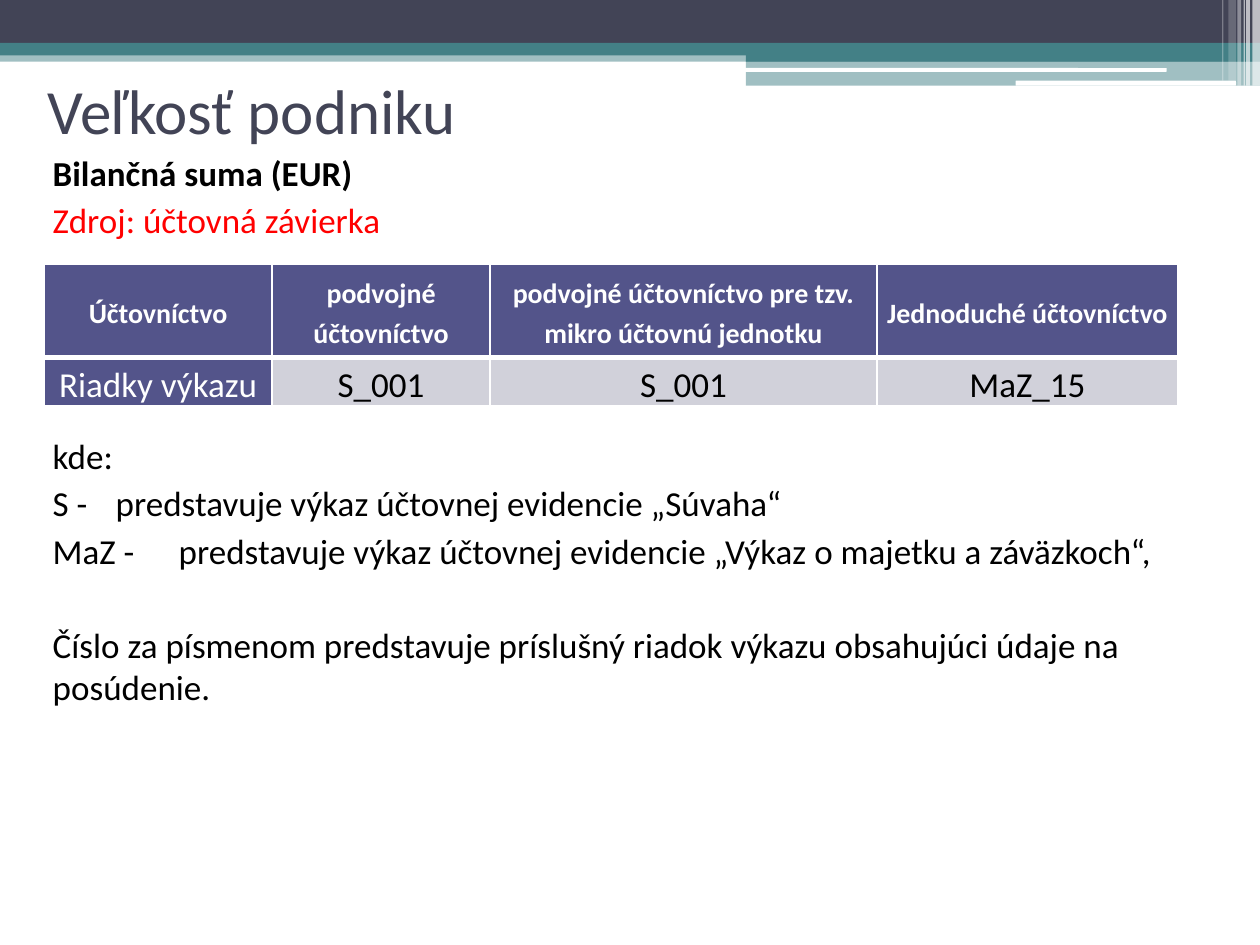
import pptx
import pptx.dml.color
import pptx.enum.shapes
import pptx.enum.text
import pptx.oxml
import pptx.oxml.ns
import pptx.util
from pptx.util import Inches

FONT = "Calibri"
DARK, TEAL, WHITE, BLACK, RED = "424456", "438086", "FFFFFF", "000000", "FF0000"
HEADER_FILL, BODY_FILL = "53548A", "D1D1DA"

BANDS = [
    (0, 0.4, 10, 0.09, TEAL, 50),
    (0, 0, 10, 0.34, DARK, 100),
    (0, 0.34, 10, 0.1, TEAL, 100),
    (5.92, 0.39, 4.08, 0.1, TEAL, 100),
    (5.92, 0.48, 4.08, 0.2, TEAL, 50),
]
PILLS = [(5.91, 0.54, 3.35, 0.03), (8.06, 0.64, 1.75, 0.04)]
STRIPES = [
    (9.94, 0.06, 0.68, 65),
    (9.89, 0.03, 0.68, 65),
    (9.87, 0.01, 0.68, 60),
    (9.82, 0.03, 0.68, 40),
    (9.75, 0.06, 0.64, 20),
    (9.7, 0.01, 0.64, 30),
]
COLUMN_WIDTHS = [1.81, 1.73, 3.07, 2.39]
ROW_HEIGHTS = [0.74, 0.38]
TABLE_ROWS = [
    ["Účtovníctvo", "podvojné účtovníctvo",
     "podvojné účtovníctvo pre tzv. mikro účtovnú jednotku", "Jednoduché účtovníctvo"],
    ["Riadky výkazu", "S_001", "S_001", "MaZ_15"],
]
HEADING = [("Bilančná suma (EUR)", BLACK, True, 3), ("Zdroj: účtovná závierka", RED, False, 3)]
EXPLANATION = [
    ("kde:", BLACK, False, 3),
    ("S - \tpredstavuje výkaz účtovnej evidencie „Súvaha“", BLACK, False, 3),
    ("MaZ - \tpredstavuje výkaz účtovnej evidencie „Výkaz o majetku a záväzkoch“,", BLACK, False, 3),
    ("Číslo za písmenom predstavuje príslušný riadok výkazu obsahujúci údaje na posúdenie.",
     BLACK, False, 30),
]


def rgb(value):
    """Return the colour for a hex string."""
    return pptx.dml.color.RGBColor.from_string(value)


def format_runs(paragraph, size, color, bold=False):
    """Give every run of a paragraph the same font."""
    for run in paragraph.runs:
        run.font.name = FONT
        run.font.size = pptx.util.Pt(size)
        run.font.bold = bold
        run.font.color.rgb = rgb(color)


def add_bar(slide, left, top, width, height, color, opacity=100, rounded=False):
    """Add a filled bar without an outline."""
    kinds = pptx.enum.shapes.MSO_SHAPE
    kind = kinds.ROUNDED_RECTANGLE if rounded else kinds.RECTANGLE
    shape = slide.shapes.add_shape(kind, Inches(left), Inches(top), Inches(width), Inches(height))
    shape.shadow.inherit = False
    shape.line.fill.background()
    shape.fill.solid()
    shape.fill.fore_color.rgb = rgb(color)
    if opacity < 100:
        color_element = shape.fill._xPr.find(".//" + pptx.oxml.ns.qn("a:srgbClr"))
        pptx.oxml.ns.qn("a:alpha")
        alpha = color_element.makeelement(pptx.oxml.ns.qn("a:alpha"), {"val": str(opacity * 1000)})
        color_element.append(alpha)


def add_header_decoration(slide, left, top):
    """Draw the bands, pills and stripes along the top edge."""
    for x, y, width, height, color, opacity in BANDS:
        add_bar(slide, left + x, top + y, width, height, color, opacity)
    for x, y, width, height in PILLS:
        add_bar(slide, left + x, top + y, width, height, WHITE, rounded=True)
    for x, width, height, opacity in STRIPES:
        add_bar(slide, left + x, top, width, height, WHITE, opacity)


def place_title(slide, left, top, width, height):
    """Move and format the title placeholder."""
    title = slide.shapes.title
    title.left, title.top = Inches(left), Inches(top)
    title.width, title.height = Inches(width), Inches(height)
    title.text_frame.text = "Veľkosť podniku"
    title.text_frame.vertical_anchor = pptx.enum.text.MSO_ANCHOR.MIDDLE
    paragraph = title.text_frame.paragraphs[0]
    paragraph.alignment = pptx.enum.text.PP_ALIGN.LEFT
    format_runs(paragraph, 36, DARK)


def add_text(slide, left, top, width, height, lines):
    """Add a wrapped text box with one indented paragraph for each line."""
    box = slide.shapes.add_textbox(Inches(left), Inches(top), Inches(width), Inches(height))
    frame = box.text_frame
    frame.word_wrap = True
    for index, (text, color, bold, space_before) in enumerate(lines):
        paragraph = frame.add_paragraph() if index else frame.paragraphs[0]
        paragraph.text = text
        paragraph.space_before = pptx.util.Pt(space_before)
        paragraph._p.get_or_add_pPr().set("marL", str(Inches(0.12)))
        format_runs(paragraph, 20, color, bold)


def set_borders(cell, bottom_width):
    """Draw white borders round a cell, with its own bottom width in points."""
    properties = cell._tc.get_or_add_tcPr()
    widths = {"lnL": 1, "lnR": 1, "lnT": 1, "lnB": bottom_width}
    for index, (side, width) in enumerate(widths.items()):
        border = pptx.oxml.parse_xml(
            f'<a:{side} {pptx.oxml.ns.nsdecls("a")} w="{pptx.util.Pt(width)}">'
            f'<a:solidFill><a:srgbClr val="{WHITE}"/></a:solidFill></a:{side}>'
        )
        properties.insert(index, border)


def add_accounting_table(slide, left, top):
    """Add the table of statement rows by kind of accounting."""
    table = slide.shapes.add_table(
        len(TABLE_ROWS), len(COLUMN_WIDTHS), Inches(left), Inches(top),
        Inches(sum(COLUMN_WIDTHS)), Inches(sum(ROW_HEIGHTS)),
    ).table
    for column, width in zip(table.columns, COLUMN_WIDTHS):
        column.width = Inches(width)
    for row_index, texts in enumerate(TABLE_ROWS):
        table.rows[row_index].height = Inches(ROW_HEIGHTS[row_index])
        is_header = row_index == 0
        for column_index, text in enumerate(texts):
            cell = table.cell(row_index, column_index)
            is_dark = is_header or column_index == 0
            cell.margin_left = cell.margin_right = Inches(0.05)
            cell.margin_top = cell.margin_bottom = 0
            cell.vertical_anchor = pptx.enum.text.MSO_ANCHOR.MIDDLE
            cell.fill.solid()
            cell.fill.fore_color.rgb = rgb(HEADER_FILL if is_dark else BODY_FILL)
            cell.text_frame.text = text
            paragraph = cell.text_frame.paragraphs[0]
            paragraph.alignment = pptx.enum.text.PP_ALIGN.CENTER
            paragraph.line_spacing = 1.15
            format_runs(paragraph, 16 if is_header else 20, WHITE if is_dark else BLACK, is_header)
            set_borders(cell, 3 if is_header else 1)


def main():
    """Build and save the slide."""
    presentation = pptx.Presentation()
    presentation.slide_width, presentation.slide_height = Inches(10), Inches(7.5)
    slide = presentation.slides.add_slide(presentation.slide_layouts[5])
    add_header_decoration(slide, 0, 0)
    place_title(slide, 0.28, 0.52, 9, 0.69)
    add_text(slide, 0.2, 1.15, 9.45, 0.9, HEADING)
    add_text(slide, 0.2, 3.4, 9.45, 2.4, EXPLANATION)
    add_accounting_table(slide, 0.35, 2.1)
    presentation.save("out.pptx")


if __name__ == "__main__":
    main()
